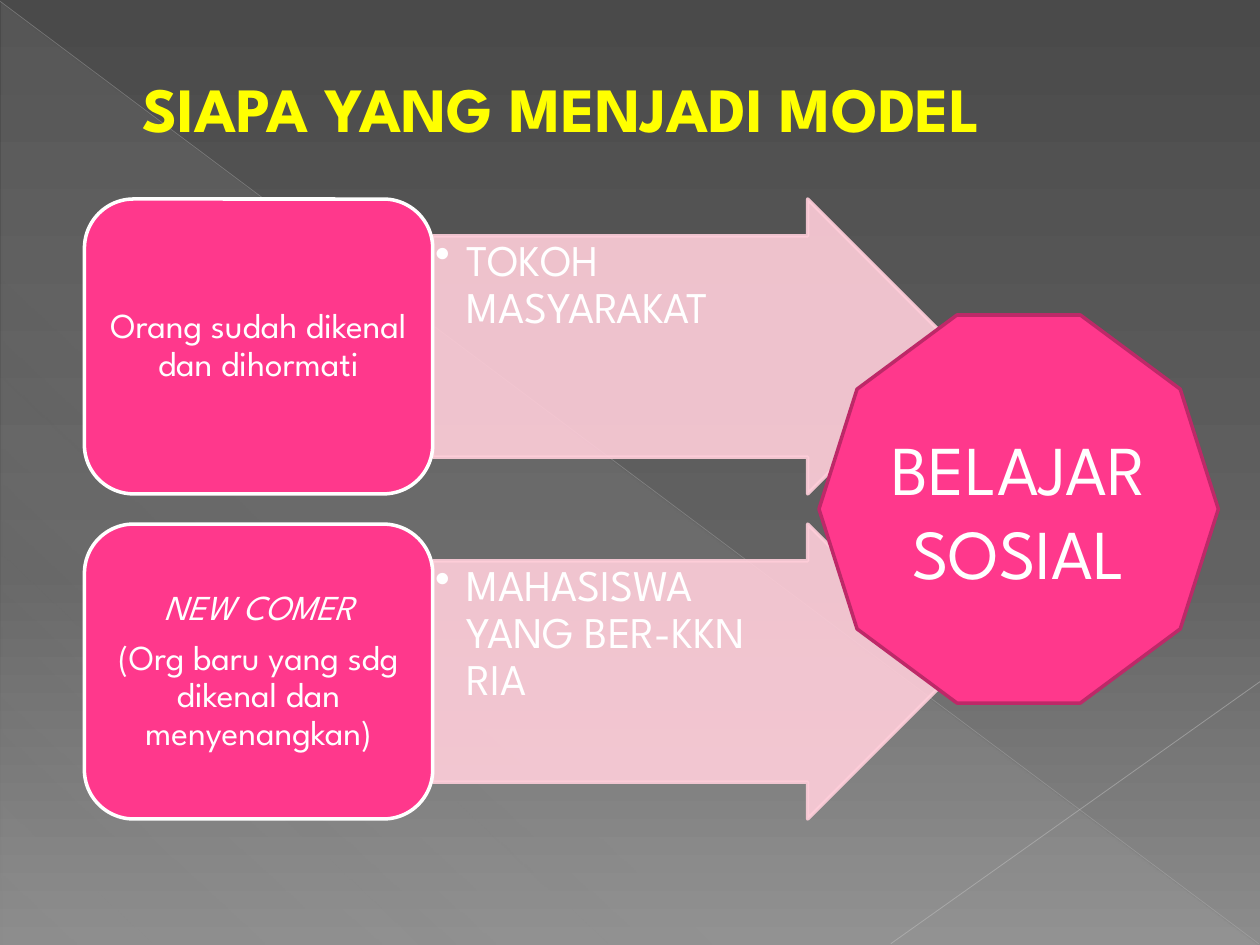
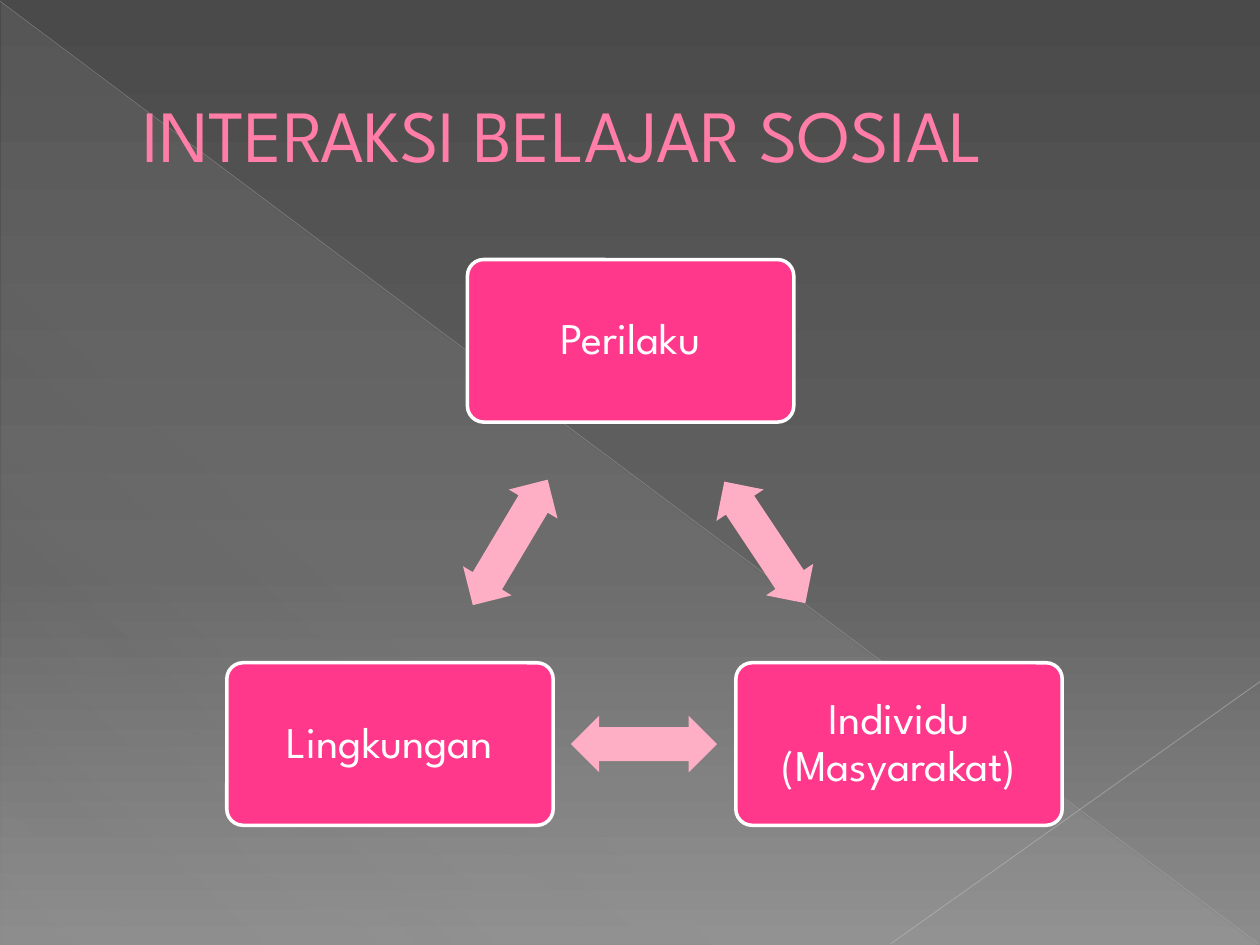
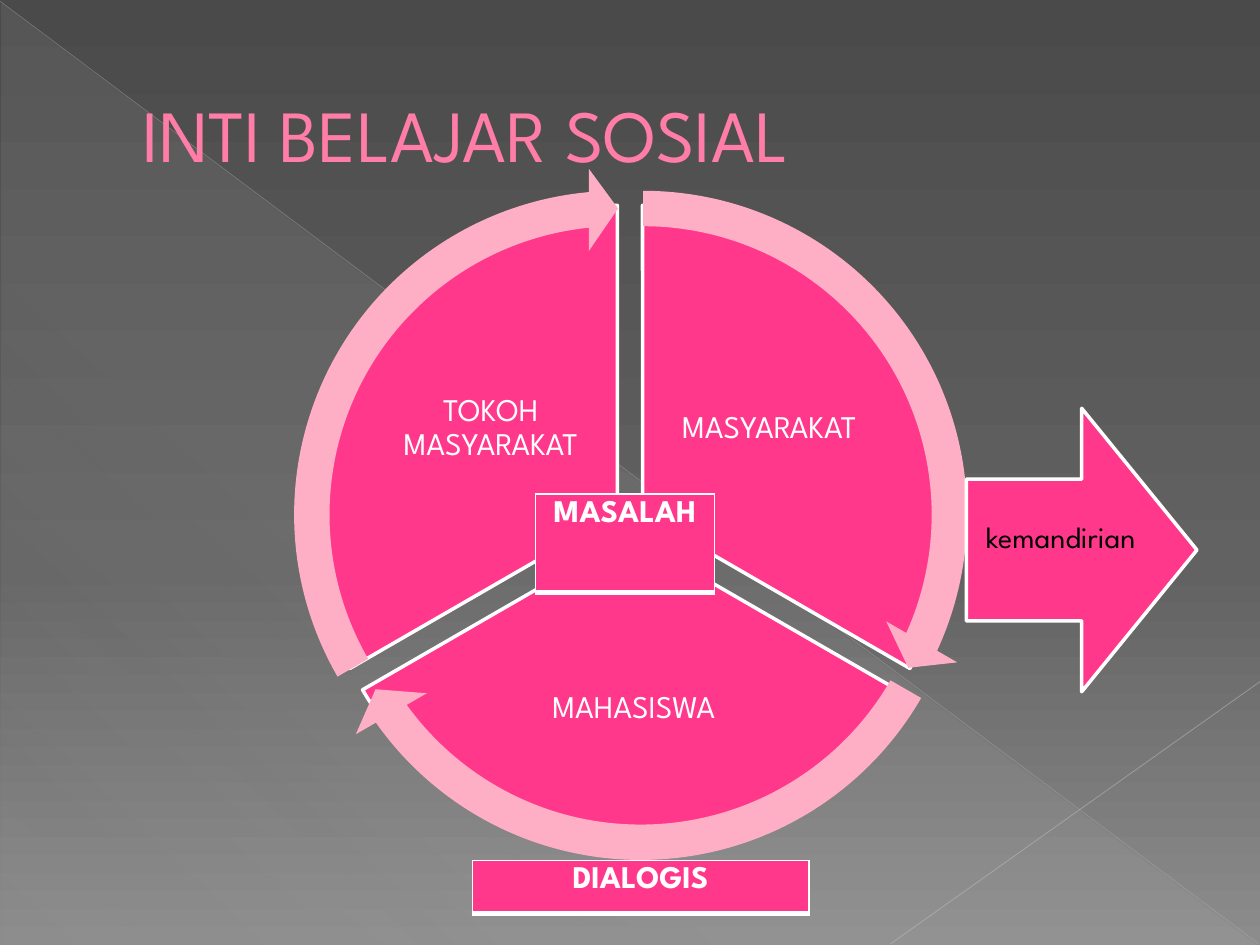
import pptx
import pptx.dml.color
import pptx.enum.shapes
import pptx.enum.text
import pptx.oxml
import pptx.oxml.ns
import pptx.util
from lxml import etree

Inches, Pt = pptx.util.Inches, pptx.util.Pt
SHAPE = pptx.enum.shapes.MSO_SHAPE
ALIGN = pptx.enum.text.PP_ALIGN
ANCHOR = pptx.enum.text.MSO_ANCHOR
qn = pptx.oxml.ns.qn

FONT = "League Spartan"
PINK, SOFT_PINK, PALE_PINK = "FF388C", "FFAFC5", "FFCEDA"
TITLE_PINK, DARK_PINK = "FF7DA7", "BD2968"
WHITE, BLACK, YELLOW = "FFFFFF", "000000", "FFFF00"
BACKGROUND = [(0, "4A4A4A", 100), (60, "626262", 100), (100, "8C8C8C", 100)]
SHEEN = [(0, "D2D2D2", 10), (70, "D2D2D2", 8), (100, "D2D2D2", 1)]


def rgb(value):
    return pptx.dml.color.RGBColor.from_string(value)


def inches(box):
    return [Inches(v) for v in box]


def set_alpha(color_parent, percent):
    for clr in color_parent.iter(qn("a:srgbClr")):
        etree.SubElement(clr, qn("a:alpha"), val=str(percent * 1000))


def set_gradient(fill, parent, stops, angle):
    """Replace the solid fill inside parent by a linear gradient."""
    fill.solid()
    grad = etree.Element(qn("a:gradFill"), rotWithShape="1")
    gs_list = etree.SubElement(grad, qn("a:gsLst"))
    for position, color, opacity in stops:
        gs = etree.SubElement(gs_list, qn("a:gs"), pos=str(position * 1000))
        clr = etree.SubElement(gs, qn("a:srgbClr"), val=color)
        etree.SubElement(clr, qn("a:alpha"), val=str(opacity * 1000))
    etree.SubElement(grad, qn("a:lin"), ang=str(angle * 60000), scaled="0")
    solid = next(parent.iter(qn("a:solidFill")))
    solid.getparent().replace(solid, grad)


def set_text(tf, paragraphs, size, color=WHITE, align=ALIGN.CENTER, anchor=ANCHOR.MIDDLE,
             margins=(0.1, 0.05, 0.1, 0.05), line_spacing=0.9, after=0.35,
             bold=False, italics=()):
    """Fill a text frame; italics holds the indexes of italic paragraphs."""
    tf.word_wrap = True
    tf.vertical_anchor = anchor
    for side, margin in zip(("left", "top", "right", "bottom"), margins):
        setattr(tf, "margin_" + side, Inches(margin))
    for i, text in enumerate(paragraphs):
        p = tf.paragraphs[0] if i == 0 else tf.add_paragraph()
        for name, value in {"alignment": align, "line_spacing": line_spacing,
                            "space_after": Pt(size * after)}.items():
            setattr(p, name, value)
        r = p.add_run()
        r.text = text
        for name, value in {"name": FONT, "size": Pt(size), "bold": bold,
                            "italic": i in italics}.items():
            setattr(r.font, name, value)
        r.font.color.rgb = rgb(color)


def add_label(slide, box, text, size, **fmt):
    sp = slide.shapes.add_textbox(*inches(box))
    set_text(sp.text_frame, [text], size, **fmt)
    return sp


def add_figure(slide, kind, box, fill=PINK, line=None, adjust=(), rotation=0):
    sp = slide.shapes.add_shape(kind, *inches(box))
    sp.shadow.inherit = False
    sp.rotation = rotation
    sp.fill.solid()
    sp.fill.fore_color.rgb = rgb(fill)
    if line:
        sp.line.color.rgb = rgb(line)
        sp.line.width = Pt(2)
    else:
        sp.line.fill.background()
    for i, value in enumerate(adjust):
        sp.adjustments[i] = value
    return sp


def add_backdrop(slide):
    fill = slide.background.fill
    fill.solid()
    set_gradient(fill, slide.element, BACKGROUND, 90)
    sp = add_figure(slide, SHAPE.RIGHT_TRIANGLE, (0.01, 0.02, 9.98, 7.48))
    set_gradient(sp.fill, sp.element.spPr, SHEEN, 133)
    for ends, color, width, opacity in (((0, 0.01, 9.99, 7.49), "BFBFBF", 0.39, 35),
                                        ((10, 5.41, 7.07, 7.49), "C6C6C6", 0.47, 45)):
        line = slide.shapes.add_connector(pptx.enum.shapes.MSO_CONNECTOR.STRAIGHT,
                                          *inches(ends))
        line.line.color.rgb = rgb(color)
        line.line.width = Pt(width)
        sp_pr = line.element.spPr
        set_alpha(sp_pr, opacity)
        etree.SubElement(sp_pr, qn("a:effectLst"))


def new_slide(prs, title, size=42, color=TITLE_PINK, height=1.53, bold=False):
    slide = prs.slides.add_slide(prs.slide_layouts[6])
    add_backdrop(slide)
    add_label(slide, (0.5, 0.29, 9, height), title, size, color=color, bold=bold,
              align=ALIGN.LEFT, margins=(0.63, 0.05, 0.1, 0.05), line_spacing=1, after=0)
    return slide


def add_model_row(slide, box, source, example, italics=()):
    """A card with an arrow that leaves its right edge."""
    left, top, width, height = box
    card_width = 0.4 * width
    arrow = add_figure(slide, SHAPE.RIGHT_ARROW,
                       (left + card_width, top, width - card_width, height),
                       PALE_PINK, PALE_PINK, (0.75, 0.5))
    set_alpha(arrow.element.spPr, 90)
    set_text(arrow.text_frame, [example], 25, align=ALIGN.LEFT, anchor=ANCHOR.TOP,
             margins=(0.02, 0.02, 0.61, 0.02), after=0.15)
    p_pr = arrow.text_frame.paragraphs[0]._p.get_or_add_pPr()
    p_pr.set("marL", str(Inches(0.25)))
    p_pr.set("indent", str(Inches(-0.25)))
    etree.SubElement(p_pr, qn("a:buChar"), char="•")
    card = add_figure(slide, SHAPE.ROUNDED_RECTANGLE, (left, top, card_width, height),
                      line=WHITE)
    set_text(card.text_frame, source, 20, margins=(0.08, 0.04, 0.08, 0.04),
             italics=italics)


def build_models(prs):
    slide = new_slide(prs, "SIAPA YANG MENJADI MODEL", 36, YELLOW, 1.12, True)
    rows = [(["Orang sudah dikenal dan dihormati"], "TOKOH MASYARAKAT", ()),
            (["NEW COMER", "(Org baru yang sdg dikenal dan menyenangkan)"],
             "MAHASISWA YANG BER-KKN RIA", (0,))]
    for i, row in enumerate(rows):
        add_model_row(slide, (0.67, 1.58 + i * 2.58, 6.91, 2.34), *row)
    goal = add_figure(slide, SHAPE.DECAGON, (6.5, 2.5, 3.17, 3.08), line=DARK_PINK)
    set_text(goal.text_frame, ["BELAJAR SOSIAL"], 40, line_spacing=1, after=0)


def build_interaction(prs):
    slide = new_slide(prs, "INTERAKSI BELAJAR SOSIAL")
    for text, left, top in (("Perilaku", 3.71, 2.06),
                            ("Individu (Masyarakat)", 5.84, 5.26),
                            ("Lingkungan", 1.8, 5.26)):
        node = add_figure(slide, SHAPE.ROUNDED_RECTANGLE, (left, top, 2.59, 1.29),
                          line=WHITE, adjust=(0.1,))
        set_text(node.text_frame, [text], 25, margins=(0.1,) * 4)
    for left, top, rotation in ((5.49, 4.08, 56.3), (4.53, 5.68, 180), (3.47, 4.08, 300.8)):
        add_figure(slide, SHAPE.LEFT_RIGHT_ARROW, (left, top, 1.16, 0.45), SOFT_PINK,
                   adjust=(0.6, 0.5), rotation=rotation)


def add_cell_table(slide, box, text):
    """A table of one cell with a heavier lower border."""
    table = slide.shapes.add_table(1, 1, *inches(box)).table
    cell = table.cell(0, 0)
    set_text(cell.text_frame, [text], 18, bold=True, line_spacing=1, after=0)
    cell.vertical_anchor = ANCHOR.TOP
    tc_pr = cell._tc.get_or_add_tcPr()
    for side, width in (("L", 1), ("R", 1), ("T", 1), ("B", 3)):
        ln = etree.SubElement(tc_pr, qn("a:ln" + side), w=str(Pt(width)))
        solid = etree.SubElement(ln, qn("a:solidFill"))
        etree.SubElement(solid, qn("a:srgbClr"), val=WHITE)
    cell.fill.solid()
    cell.fill.fore_color.rgb = rgb(PINK)


def add_cycle(slide, left, top):
    """Three sectors with their labels, ringed by three curved arrows."""
    sectors = [("MASYARAKAT", (0.5, 0.3), (162, 18), (3.08, 1.34, 1.75, 1.46)),
               ("MAHASISWA", (0.4, 0.47), (18, 90), (1.57, 3.65, 2.62, 1.28)),
               ("TOKOH MASYARAKAT", (0.3, 0.3), (90, 162), (0.87, 1.34, 1.75, 1.46))]
    for text, (dx, dy), angles, (x, y, width, height) in sectors:
        add_figure(slide, SHAPE.PIE, (left + dx, top + dy, 4.9, 4.9), line=WHITE,
                   adjust=angles)
        add_label(slide, (left + x, top + y, width, height), text, 18, margins=(0.03,) * 4)
    for dx, dy, end, start in ((0.2, 0, 14.73, 161.99), (0.18, 0.17, 86.72, 18),
                               (0, 0, 158.73, 90)):
        add_figure(slide, SHAPE.CIRCULAR_ARROW, (left + dx, top + dy, 5.51, 5.51),
                   SOFT_PINK, adjust=(0.051, 3.275, end, start, 0.059))


def build_core(prs):
    slide = new_slide(prs, "INTI BELAJAR SOSIAL")
    add_cycle(slide, 2.15, 1.33)
    add_cell_table(slide, (4.25, 3.92, 1.42, 0.78), "MASALAH")
    add_cell_table(slide, (3.75, 6.83, 2.67, 0.42), "DIALOGIS")
    add_figure(slide, SHAPE.RIGHT_ARROW, (7.67, 3.24, 1.83, 2.25), line=WHITE)
    add_label(slide, (7.67, 3.41, 1.5, 1.74), "kemandirian", 17, color=BLACK,
              margins=(0, 0.19, 0, 0.19))


def main():
    prs = pptx.Presentation()
    prs.slide_width, prs.slide_height = Inches(10), Inches(7.5)
    build_models(prs)
    build_interaction(prs)
    build_core(prs)
    prs.save("out.pptx")


if __name__ == "__main__":
    main()
